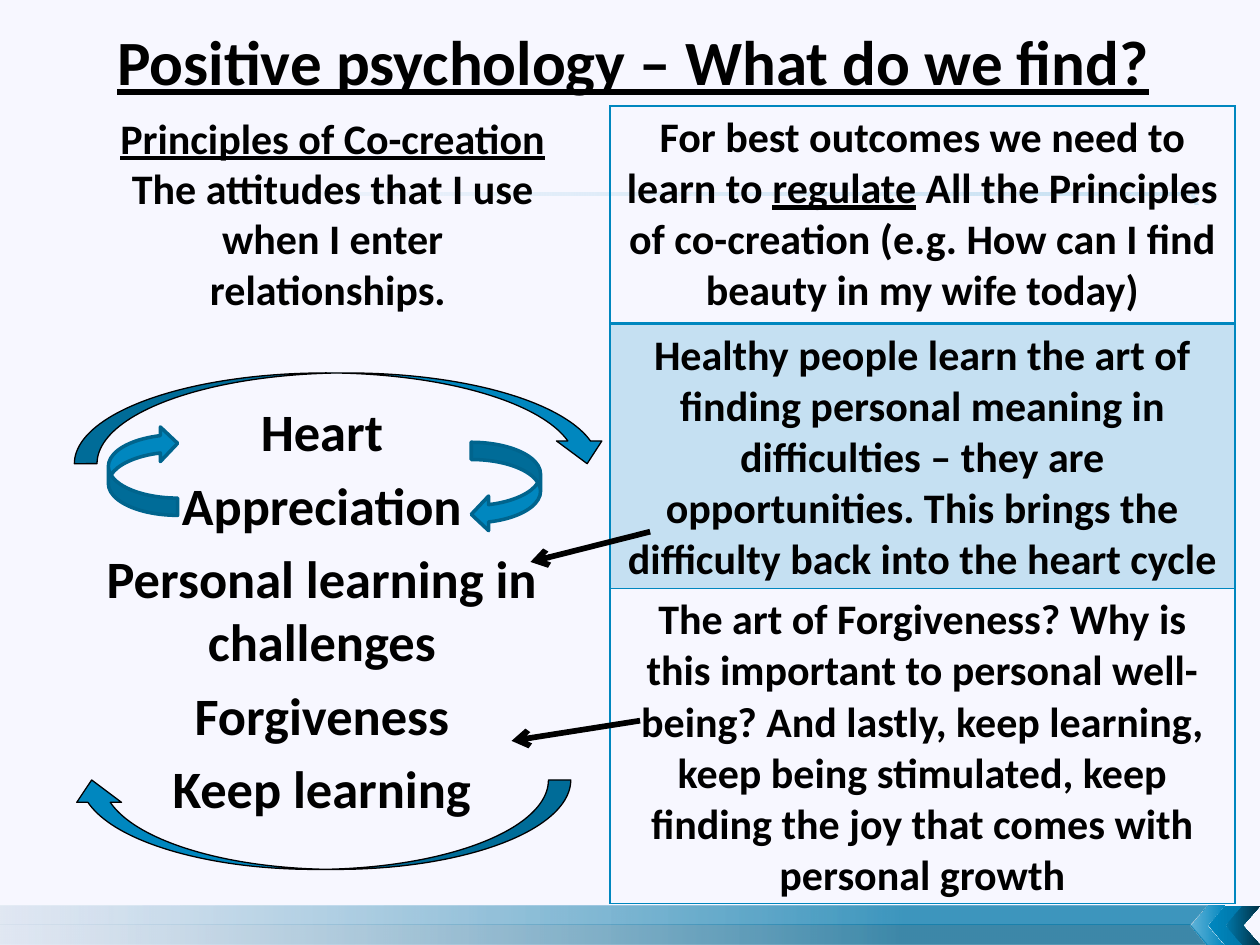
"""Builds the slide on positive psychology and the principles of co-creation."""
from lxml.etree import SubElement
from pptx import Presentation
from pptx.dml.color import RGBColor
from pptx.enum.shapes import MSO_CONNECTOR as CONNECTOR, MSO_SHAPE as SHAPE
from pptx.enum.text import MSO_ANCHOR as ANCHOR, MSO_AUTO_SIZE as AUTO_SIZE, PP_ALIGN as ALIGN
from pptx.oxml import parse_xml
from pptx.oxml.ns import nsdecls, qn
from pptx.util import Inches, Pt

COLORS = {
    "background": "F7F7FF", "text": "000000", "blue": "0087BF", "deep": "0077A9",
    "outline": "00648D", "navy": "003246", "pale": "CCD9E8",
}


def write(frame, paragraphs, size=24, align=ALIGN.CENTER, space_before=0):
    """Fill a text frame; each paragraph is a list of (text, underlined) runs."""
    for index, runs in enumerate(paragraphs):
        paragraph = frame.paragraphs[0] if index == 0 else frame.add_paragraph()
        paragraph.alignment = align
        if index:
            paragraph.space_before = Pt(space_before)
        for text, underlined in runs:
            run = paragraph.add_run()
            run.text = text
            font = run.font
            font.name, font.size, font.bold, font.underline = "Calibri", Pt(size), True, underlined
            font.color.rgb = RGBColor.from_string(COLORS["text"])


def decorate(shape, *stops, flip=False):
    """Give a shape a right-to-left gradient of (position, color, opacity) stops."""
    shape.shadow.inherit = False
    shape.line.fill.background()
    stop_xml = "".join(
        f'<a:gs pos="{position * 1000}"><a:srgbClr val="{COLORS[color]}">'
        f'<a:alpha val="{opacity * 1000}"/></a:srgbClr></a:gs>'
        for position, color, opacity in stops)
    gradient = parse_xml(
        f'<a:gradFill rotWithShape="1" {nsdecls("a")}><a:gsLst>{stop_xml}</a:gsLst>'
        '<a:lin ang="10800000" scaled="0"/></a:gradFill>')
    properties = shape.element.spPr
    properties.insert(list(properties).index(properties.find(qn("a:ln"))), gradient)
    if flip:
        properties.find(qn("a:xfrm")).set("flipH", "1")


presentation = Presentation()
presentation.slide_width, presentation.slide_height = Inches(10), Inches(7.5)
slide = presentation.slides.add_slide(presentation.slide_layouts[5])
slide.background.fill.solid()
slide.background.fill.fore_color.rgb = RGBColor.from_string(COLORS["background"])
shapes = slide.shapes

for outer_y, color in ((7.5, "outline"), (7.19, "deep")):
    builder = shapes.build_freeform(Inches(9.58), Inches(outer_y))
    corners = [(0, outer_y), (0, 7.34), (9.44, 7.34)]
    builder.add_line_segments([(Inches(x), Inches(y)) for x, y in corners])
    decorate(builder.convert_to_shape(), (25, color, 75), (100, "pale", 50))

chevron_stops = [
    ((0, "blue", 60), (100, "blue", 100)),
    ((0, "blue", 100), (100, "deep", 100)),
    ((0, "deep", 100), (100, "navy", 100)),
]
for index, stops in enumerate(chevron_stops):
    chevron = shapes.add_shape(
        SHAPE.CHEVRON, Inches(9.45 + 0.14 * index), Inches(7.19), Inches(0.27), Inches(0.31))
    decorate(chevron, *stops, flip=True)

rule_tip = shapes.add_shape(SHAPE.CHEVRON, Inches(9.45), Inches(1.46), Inches(0.06), Inches(0.16))
decorate(rule_tip, (0, "blue", 20), (100, "blue", 15), flip=True)
rule = shapes.add_shape(SHAPE.RECTANGLE, Inches(2.41), Inches(1.53), Inches(7.03), Inches(0.02))
decorate(rule, (0, "blue", 20), (100, "blue", 4))

title = shapes.title
title.left, title.top, title.width, title.height = Inches(0.83), Inches(0.13), Inches(8.49), Inches(0.71)
title.text_frame.word_wrap = False
title.text_frame.auto_size = AUTO_SIZE.NONE
title.text_frame.vertical_anchor = ANCHOR.TOP
write(title.text_frame, [[("Positive psychology – What do we find?", True)]], size=36, align=ALIGN.LEFT)

principles = shapes.add_textbox(Inches(0.43), Inches(3.12), Inches(4.25), Inches(4.02))
principles.text_frame.word_wrap = True
names = ["Heart", "Appreciation", "Personal learning in challenges", "Forgiveness", "Keep learning"]
write(principles.text_frame, [[(name, False)] for name in names], size=30, space_before=6)

cycle_arrows = [
    (SHAPE.CURVED_DOWN_ARROW, 0.59, 2.96, 4.25, 0.72, 0, "text", 0.75),
    (SHAPE.CURVED_DOWN_ARROW, 0.55, 6.19, 3.98, 0.71, 180, "text", 0.75),
    (SHAPE.CURVED_LEFT_ARROW, 3.74, 3.51, 0.55, 0.71, 0, "outline", 2),
    (SHAPE.CURVED_LEFT_ARROW, 0.86, 3.38, 0.55, 0.71, 180, "outline", 2),
]
for kind, left, top, width, height, rotation, line_color, line_width in cycle_arrows:
    arrow = shapes.add_shape(kind, Inches(left), Inches(top), Inches(width), Inches(height))
    arrow.rotation = rotation
    arrow.shadow.inherit = False
    arrow.fill.solid()
    arrow.fill.fore_color.rgb = RGBColor.from_string(COLORS["blue"])
    arrow.line.color.rgb = RGBColor.from_string(COLORS[line_color])
    arrow.line.width = Pt(line_width)

introduction = shapes.add_textbox(Inches(0.75), Inches(0.84), Inches(3.78), Inches(1.72))
introduction.text_frame.word_wrap = True
write(introduction.text_frame, [
    [("Principles of Co-creation", True)],
    [("The attitudes that I use when I enter relationships. ", False)],
])

findings = [
    (1.73, [("For best outcomes we need to learn to ", False), ("regulate", True),
            (" All the Principles of co-creation (e.g. How can I find beauty in my wife today)", False)]),
    (2.1, [("Healthy people learn the art of finding personal meaning in difficulties – they are "
            "opportunities. This brings the difficulty back into the heart cycle", False)]),
    (2.5, [("The art of Forgiveness? Why is this important to personal well-being? And lastly, keep "
            "learning, keep being stimulated, keep finding the joy that comes with personal growth", False)]),
]
table = shapes.add_table(3, 1, Inches(4.84), Inches(0.84), Inches(4.96), Inches(6.33)).table
table.first_row = table.horz_banding = False
for index, (height, runs) in enumerate(findings):
    table.rows[index].height = Inches(height)
    cell = table.cell(index, 0)
    write(cell.text_frame, [runs])
    cell_properties = cell._tc.get_or_add_tcPr()
    for side in "LRTB":
        width = 2 if (index, side) in ((0, "B"), (1, "T")) else 1
        border = SubElement(cell_properties, qn(f"a:ln{side}"), w=str(Pt(width)))
        border_fill = SubElement(border, qn("a:solidFill"))
        SubElement(border_fill, qn("a:srgbClr"), val=COLORS["blue"])
    if index == 1:
        cell.fill.solid()
        cell.fill.fore_color.rgb = RGBColor.from_string(COLORS["blue"])
        fill_color = cell_properties.find(qn("a:solidFill")).find(qn("a:srgbClr"))
        SubElement(fill_color, qn("a:alpha"), val="20000")
    else:
        cell.fill.background()

for start_x, start_y, end_x, end_y in ((5.16, 4.22, 4.21, 4.46), (5.08, 5.72, 4.06, 5.88)):
    pointer = shapes.add_connector(
        CONNECTOR.STRAIGHT, Inches(start_x), Inches(start_y), Inches(end_x), Inches(end_y))
    pointer.line.color.rgb = RGBColor.from_string(COLORS["text"])
    pointer.line.width = Pt(3.25)
    SubElement(pointer.line._get_or_add_ln(), qn("a:tailEnd"), type="arrow")
    SubElement(pointer.element.spPr, qn("a:effectLst"))

presentation.save("out.pptx")
